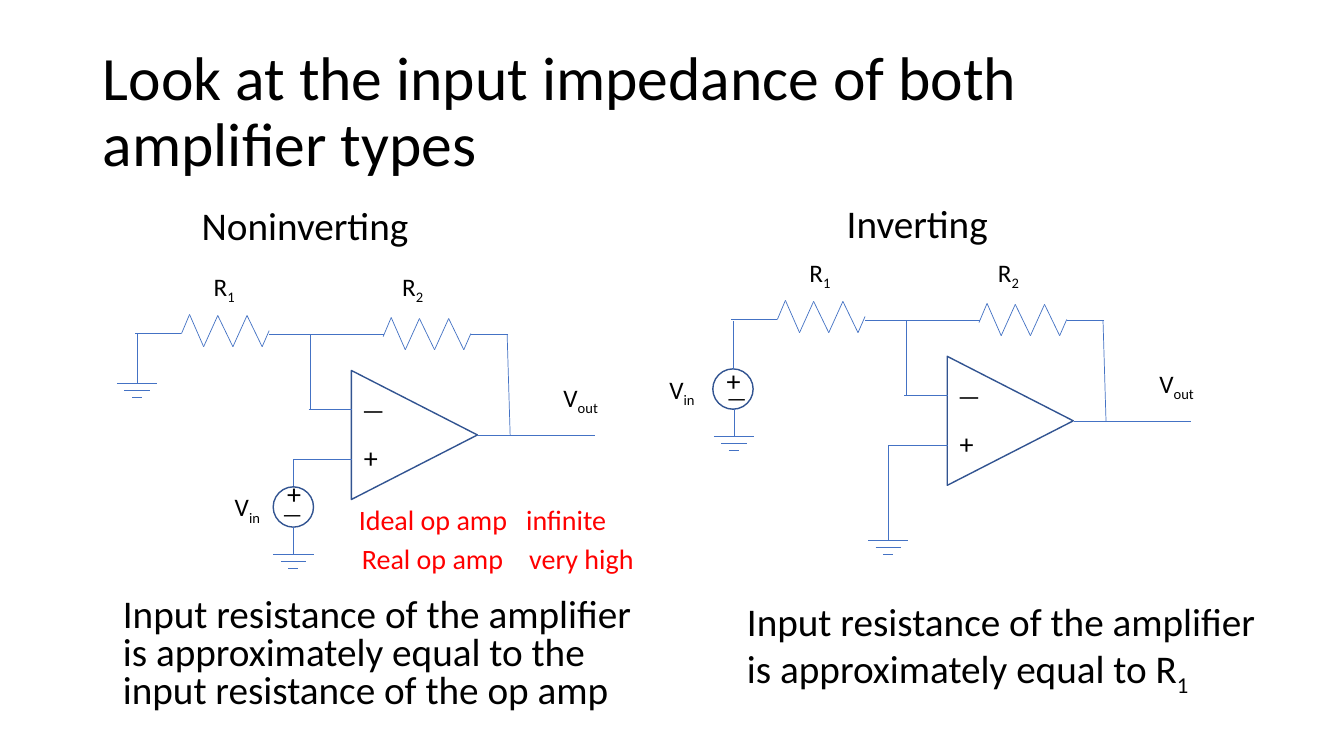
from dataclasses import dataclass
from typing import Union

from lxml import etree
from pptx import Presentation
from pptx.dml.color import RGBColor
from pptx.enum.shapes import MSO_CONNECTOR, MSO_SHAPE
from pptx.enum.text import MSO_ANCHOR, MSO_AUTO_SIZE, PP_ALIGN
from pptx.oxml.ns import qn
from pptx.shapes.shapetree import GroupShapes, SlideShapes
from pptx.text.text import TextFrame
from pptx.util import Inches, Pt

STRAIGHT = MSO_CONNECTOR.STRAIGHT
OVAL, TRIANGLE = MSO_SHAPE.OVAL, MSO_SHAPE.ISOSCELES_TRIANGLE
LEFT = PP_ALIGN.LEFT
TOP, MIDDLE = MSO_ANCHOR.TOP, MSO_ANCHOR.MIDDLE
FIXED, GROW = MSO_AUTO_SIZE.NONE, MSO_AUTO_SIZE.SHAPE_TO_FIT_TEXT

Point = tuple[float, float]
Wire = tuple[Point, Point]
Box = tuple[float, float, float, float]
Shapes = Union[SlideShapes, GroupShapes]


@dataclass(frozen=True)
class Theme:
    font: str = "Calibri"
    ink: RGBColor = RGBColor(0, 0, 0)
    accent: RGBColor = RGBColor(0xFF, 0, 0)
    wire: RGBColor = RGBColor(0x44, 0x72, 0xC4)
    outline: RGBColor = RGBColor(0x32, 0x54, 0x91)
    title: int = 44
    body: int = 28
    note: int = 20
    plus: int = 20
    label: int = 18
    source_minus: int = 16
    wire_width: float = 0.5
    outline_width: float = 1


THEME = Theme()


@dataclass(frozen=True)
class Label:
    text: str
    box: Box
    size: int
    sub: str = ""
    color: RGBColor = THEME.ink
    spacing: float = 0.9


@dataclass(frozen=True)
class Source:
    """Voltage source; the sign and name positions are offsets from its corner."""
    at: Point
    plus: Point
    minus: Point
    name: Point


@dataclass(frozen=True)
class Circuit:
    shift: Point
    source: Source
    wires: list[Wire]
    grounds: list[Point]


# Parts shared by both amplifiers, before the shift
OP_AMP: Box = (3.47, 3.69, 1.28, 1.25)
ZIGZAG: list[Point] = [(0, 0), (0.08, -0.19), (0.22, 0.13), (0.36, -0.18), (0.51, 0.13),
                       (0.65, -0.18), (0.8, 0.13), (0.87, -0.03)]
RESISTORS: list[Point] = [(1.8, 3.31), (3.8, 3.34)]
SHARED_WIRES: list[Wire] = [
    ((3.06, 4.06), (3.49, 4.06)),
    ((2.91, 4.56), (3.49, 4.56)),
    ((4.74, 4.32), (5.9, 4.32)),
    ((2.67, 3.32), (3.81, 3.32)),
    ((3.08, 4.06), (3.08, 3.32)),
    ((1.8, 3.31), (1.34, 3.31)),
    ((5.06, 4.32), (5.03, 3.32)),
    ((5.04, 3.32), (4.67, 3.32)),
]
SHARED_LABELS = [
    Label("—", (3.49, 3.86, 0.34, 0.4), THEME.label),
    Label("+", (3.51, 4.32, 0.34, 0.44), THEME.plus),
    Label("V", (5.49, 3.74, 0.57, 0.4), THEME.label, "out"),
    Label("R", (2.02, 2.64, 0.57, 0.4), THEME.label, "1"),
    Label("R", (3.89, 2.64, 0.57, 0.4), THEME.label, "2"),
]
GROUND_BARS = [(0.2, 0), (0.125, 0.07), (0.05, 0.14)]
SOURCE_SIZE = 0.4

NONINVERTING = Circuit(
    shift=(0, 0),
    source=Source((2.71, 4.83), (0.04, -0.15), (-0.01, 0.08), (-0.48, 0)),
    wires=[((2.91, 4.82), (2.91, 4.55)), ((2.91, 5.5), (2.91, 5.23)),
           ((1.36, 3.8), (1.36, 3.31))],
    grounds=[(2.91, 5.5), (1.36, 3.8)],
)
INVERTING = Circuit(
    shift=(5.91, -0.14),
    source=Source((7.07, 3.66), (0.04, -0.1), (0.04, 0.1), (-0.53, 0)),
    wires=[((8.81, 5.36), (8.81, 4.41)), ((7.27, 3.66), (7.27, 3.18)),
           ((7.28, 4.33), (7.28, 4.06))],
    grounds=[(8.81, 5.36), (7.28, 4.33)],
)

TITLE = Label("Look at the input impedance of both amplifier types",
              (0.92, 0.4, 11.5, 1.45), THEME.title)
HEADING = Label("Noninverting", (1.9, 2, 3.66, 0.64), THEME.body)
REMARKS = [
    Label("Input resistance of the amplifier is approximately equal to the input "
          "resistance of the op amp", (1.12, 5.89, 5.41, 1.28), THEME.body, spacing=0.8),
    Label("Input resistance of the amplifier is approximately equal to R",
          (7.31, 5.93, 5.41, 1.28), THEME.body, "1"),
    Label("Inverting", (8.3, 1.98, 2.57, 0.63), THEME.body),
    Label("Ideal op amp", (3.46, 4.97, 1.85, 0.42), THEME.note, color=THEME.accent),
    Label("infinite", (5.12, 4.97, 1.85, 0.42), THEME.note, color=THEME.accent),
    Label("Real op amp", (3.49, 5.36, 1.85, 0.42), THEME.note, color=THEME.accent),
    Label("very high", (5.15, 5.36, 1.85, 0.42), THEME.note, color=THEME.accent),
]


def moved(point: Point, shift: Point) -> Point:
    return point[0] + shift[0], point[1] + shift[1]


def write(tf: TextFrame, label: Label, spacing: float, before: float) -> None:
    tf.word_wrap = True
    p = tf.paragraphs[0]
    p.alignment, p.line_spacing, p.space_before = LEFT, spacing, Pt(before)
    for text, baseline in ((label.text, None), (label.sub, "-25000")):
        if not text:
            continue
        r = p.add_run()
        r.text = text
        r.font.name, r.font.size = THEME.font, Pt(label.size)
        r.font.color.rgb = label.color
        if baseline:
            r._r.get_or_add_rPr().set("baseline", baseline)


def add_symbol(shapes: Shapes, label: Label, shift: Point = (0, 0)) -> None:
    x, y, w, h = label.box
    x, y = moved((x, y), shift)
    sp = shapes.add_textbox(Inches(x), Inches(y), Inches(w), Inches(h))
    write(sp.text_frame, label, 1.0, 0)
    sp.text_frame.auto_size = GROW


def add_remark(shapes: Shapes, label: Label) -> None:
    sp = shapes.add_textbox(*map(Inches, label.box))
    write(sp.text_frame, label, label.spacing, 10)


def fill_placeholder(sp, label: Label, anchor: MSO_ANCHOR, before: float) -> None:
    sp.left, sp.top, sp.width, sp.height = map(Inches, label.box)
    tf = sp.text_frame
    write(tf, label, label.spacing, before)
    tf.auto_size, tf.vertical_anchor = FIXED, anchor


def add_wire(shapes: Shapes, start: Point, end: Point) -> None:
    line = shapes.add_connector(STRAIGHT, *map(Inches, (*start, *end)))
    line.line.color.rgb, line.line.width = THEME.wire, Pt(THEME.wire_width)
    etree.SubElement(line._element.spPr, qn("a:effectLst"))


def add_outline(shapes: Shapes, kind: MSO_SHAPE, box: Box, rotation: float = 0) -> None:
    sp = shapes.add_shape(kind, *map(Inches, box))
    sp.rotation = rotation
    sp.shadow.inherit = False
    sp.fill.background()
    sp.line.color.rgb, sp.line.width = THEME.outline, Pt(THEME.outline_width)


def add_source(shapes: Shapes, source: Source) -> None:
    add_outline(shapes, OVAL, (*source.at, SOURCE_SIZE, SOURCE_SIZE))
    add_symbol(shapes, Label("+", (*source.plus, 0.34, 0.44), THEME.plus), source.at)
    add_symbol(shapes, Label("—", (*source.minus, 0.34, 0.37), THEME.source_minus), source.at)
    add_symbol(shapes, Label("V", (*source.name, 0.57, 0.4), THEME.label, "in"), source.at)


def add_circuit(slide_shapes: SlideShapes, circuit: Circuit) -> None:
    shapes = slide_shapes.add_group_shape().shapes
    x, y, w, h = OP_AMP
    add_outline(shapes, TRIANGLE, (*moved((x, y), circuit.shift), w, h), 90)
    for label in SHARED_LABELS:
        add_symbol(shapes, label, circuit.shift)
    add_source(shapes, circuit.source)
    for start, end in SHARED_WIRES:
        add_wire(shapes, moved(start, circuit.shift), moved(end, circuit.shift))
    for start, end in circuit.wires:
        add_wire(shapes, start, end)
    for resistor in RESISTORS:
        corners = [moved(moved(p, resistor), circuit.shift) for p in ZIGZAG]
        for start, end in zip(corners, corners[1:]):
            add_wire(shapes, start, end)
    for x, y in circuit.grounds:
        for half, drop in GROUND_BARS:
            add_wire(shapes, (x - half, y + drop), (x + half, y + drop))


def main() -> None:
    prs = Presentation()
    prs.slide_width, prs.slide_height = Inches(13.33), Inches(7.5)
    s = prs.slides.add_slide(prs.slide_layouts[1])
    fill_placeholder(s.shapes.title, TITLE, MIDDLE, 0)
    body = s.placeholders[1]
    fill_placeholder(body, HEADING, TOP, 10)
    pPr = body.text_frame.paragraphs[0]._p.get_or_add_pPr()
    pPr.set("marL", "0")
    pPr.set("indent", "0")
    etree.SubElement(pPr, qn("a:buNone"))
    for circuit in (NONINVERTING, INVERTING):
        add_circuit(s.shapes, circuit)
    for remark in REMARKS:
        add_remark(s.shapes, remark)
    prs.save("out.pptx")


if __name__ == "__main__":
    main()
